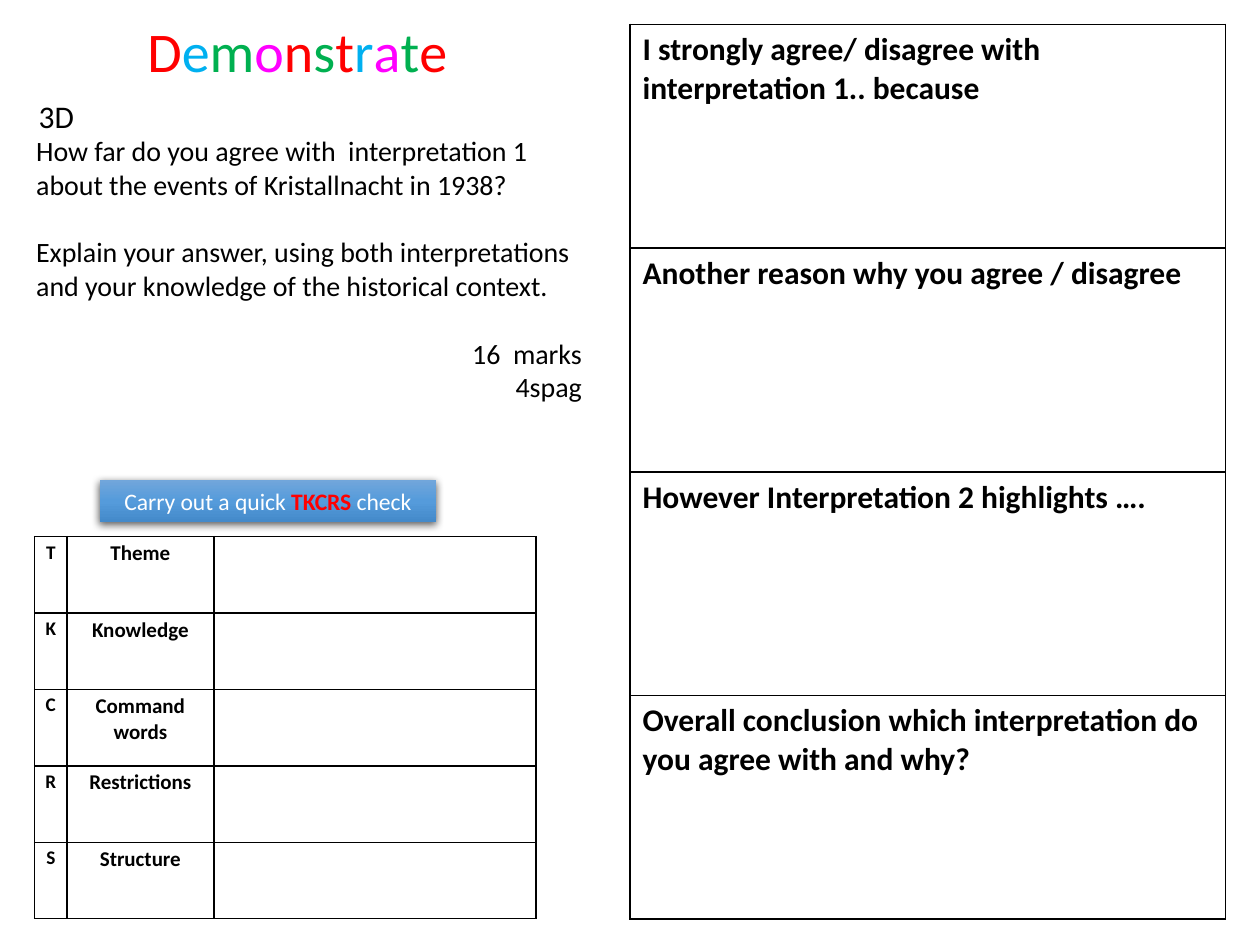
from lxml.etree import SubElement
from pptx import Presentation
from pptx.dml.color import RGBColor
from pptx.enum.shapes import MSO_SHAPE
from pptx.enum.text import MSO_ANCHOR, PP_ALIGN
from pptx.oxml import parse_xml
from pptx.oxml.ns import nsdecls, qn
from pptx.util import Cm, Pt

COLORS = {"black": "000000", "white": "FFFFFF", "red": "FF0000",
          "blue": "00B0F0", "green": "00B050", "pink": "FF00FF",
          "top": "71A6DB", "middle": "559BDB", "bottom": "448ACA"}


def write(tf, *runs, size=16, color="black", bold=False, align=PP_ALIGN.LEFT,
          before=0, new=False):
    """Write one paragraph; a run is a string or (text, color, bold)."""
    p = tf.add_paragraph() if new else tf.paragraphs[0]
    p.alignment = align
    p.space_before = Pt(before)
    for run in runs:
        text, c, b = (run, color, bold) if isinstance(run, str) else run
        r = p.add_run()
        r.text = text
        r.font.name, r.font.size, r.font.bold = "Calibri", Pt(size), b
        r.font.color.rgb = RGBColor.from_string(COLORS[c])
    return p


def add_grid(left, top, widths, height, n_rows):
    """Add a plain table with equal rows and thin black borders."""
    tbl = s.shapes.add_table(n_rows, len(widths), Cm(left), Cm(top),
                             Cm(sum(widths)), Cm(height)).table
    tbl.first_row = tbl.horz_banding = False
    for col, width in zip(tbl.columns, widths):
        col.width = Cm(width)
    for row in tbl.rows:
        row.height = Cm(height / n_rows)
    for cell in tbl.iter_cells():
        tc_pr = cell._tc.get_or_add_tcPr()
        for side in ("lnL", "lnR", "lnT", "lnB"):
            ln = SubElement(tc_pr, qn(f"a:{side}"), w=str(Pt(1)))
            fill = SubElement(ln, qn("a:solidFill"))
            SubElement(fill, qn("a:srgbClr"), val=COLORS["black"])
        cell.fill.background()
    return tbl


prs = Presentation()
prs.slide_width, prs.slide_height = Cm(25.4), Cm(19.05)
s = prs.slides.add_slide(prs.slide_layouts[6])

# Check banner
sp = s.shapes.add_shape(MSO_SHAPE.RECTANGLE, Cm(2.01), Cm(9.68), Cm(6.78), Cm(0.84))
sp.line.fill.background()
sp.fill.gradient()
sp.fill.gradient_angle = 270
stops = sp._element.spPr.find(f".//{qn('a:gsLst')}")
for stop in list(stops):
    stops.remove(stop)
for pos, name in ((0, "top"), (50, "middle"), (100, "bottom")):
    gs = SubElement(stops, qn("a:gs"), pos=str(pos * 1000))
    SubElement(gs, qn("a:srgbClr"), val=COLORS[name])
sp.shadow.inherit = False
sp._element.spPr.find(qn("a:effectLst")).append(parse_xml(
    f'<a:outerShdw {nsdecls("a")} blurRad="{Pt(4.5)}" dist="{Pt(1.5)}" '
    'dir="5400000" algn="ctr" rotWithShape="0">'
    f'<a:srgbClr val="{COLORS["black"]}"><a:alpha val="63000"/></a:srgbClr>'
    '</a:outerShdw>'))
tf = sp.text_frame
tf.word_wrap = True
tf.vertical_anchor = MSO_ANCHOR.MIDDLE
write(tf, "Carry out a quick ", ("TKCRS", "red", True), " check",
      size=13.5, color="white", align=PP_ALIGN.CENTER)

# TKCRS table
checks = [("T", ["Theme"]), ("K", ["Knowledge"]), ("C", ["Command", "words"]),
          ("R", ["Restrictions"]), ("S", ["Structure"])]
tbl = add_grid(0.7, 10.82, [0.65, 2.96, 6.5], 9.71 - 2.01, len(checks))
for i, (letter, lines) in enumerate(checks):
    for j, (texts, size) in enumerate((([letter], 11), (lines, 12))):
        cell = tbl.cell(i, j)
        cell.margin_left = cell.margin_right = Cm(0.15)
        cell.margin_top = cell.margin_bottom = Cm(0.08)
        for k, text in enumerate(texts):
            write(cell.text_frame, text, size=size, bold=True,
                  align=PP_ALIGN.CENTER, new=k > 0)

# Title with coloured letters
tf = s.shapes.add_textbox(Cm(2.72), Cm(0.2), Cm(13.59), Cm(1.63)).text_frame
tf.word_wrap = True
hues = ["red", "blue", "green", "pink", "red", "green",
        "red", "blue", "pink", "green", "red"]
write(tf, *[(ch, hue, False) for ch, hue in zip("Demonstrate", hues)], size=32)

# Answer table
prompts = ["I strongly agree/ disagree with interpretation 1.. because",
           "Another reason why you agree / disagree",
           "However Interpretation 2 highlights ….",
           "Overall conclusion which interpretation do you agree with and why?"]
tbl = add_grid(12.7, 0.49, [12.0], 18.04, len(prompts))
for i, prompt in enumerate(prompts):
    write(tbl.cell(i, 0).text_frame, prompt, size=18, bold=True)

# Question, with one-line gaps between its parts
GAP = 19.5
tf = s.shapes.add_textbox(Cm(0.48), Cm(2.57), Cm(12), Cm(5.74)).text_frame
tf.word_wrap = True
write(tf, "How far do you agree with  interpretation 1")
write(tf, "about the events of Kristallnacht in 1938?", new=True)
write(tf, "Explain your answer, using both interpretations and your knowledge "
      "of the historical context.", before=GAP, new=True)
p = write(tf, "16  marks", align=PP_ALIGN.RIGHT, before=GAP, new=True)
p._p.get_or_add_pPr().set("marR", str(Cm(0.5)))
write(tf, "4spag", align=PP_ALIGN.RIGHT, new=True)

# Question number
tf = s.shapes.add_textbox(Cm(0.53), Cm(1.83), Cm(1.24), Cm(1.02)).text_frame
tf.word_wrap = False
write(tf, "3D", size=18)

prs.save("out.pptx")
